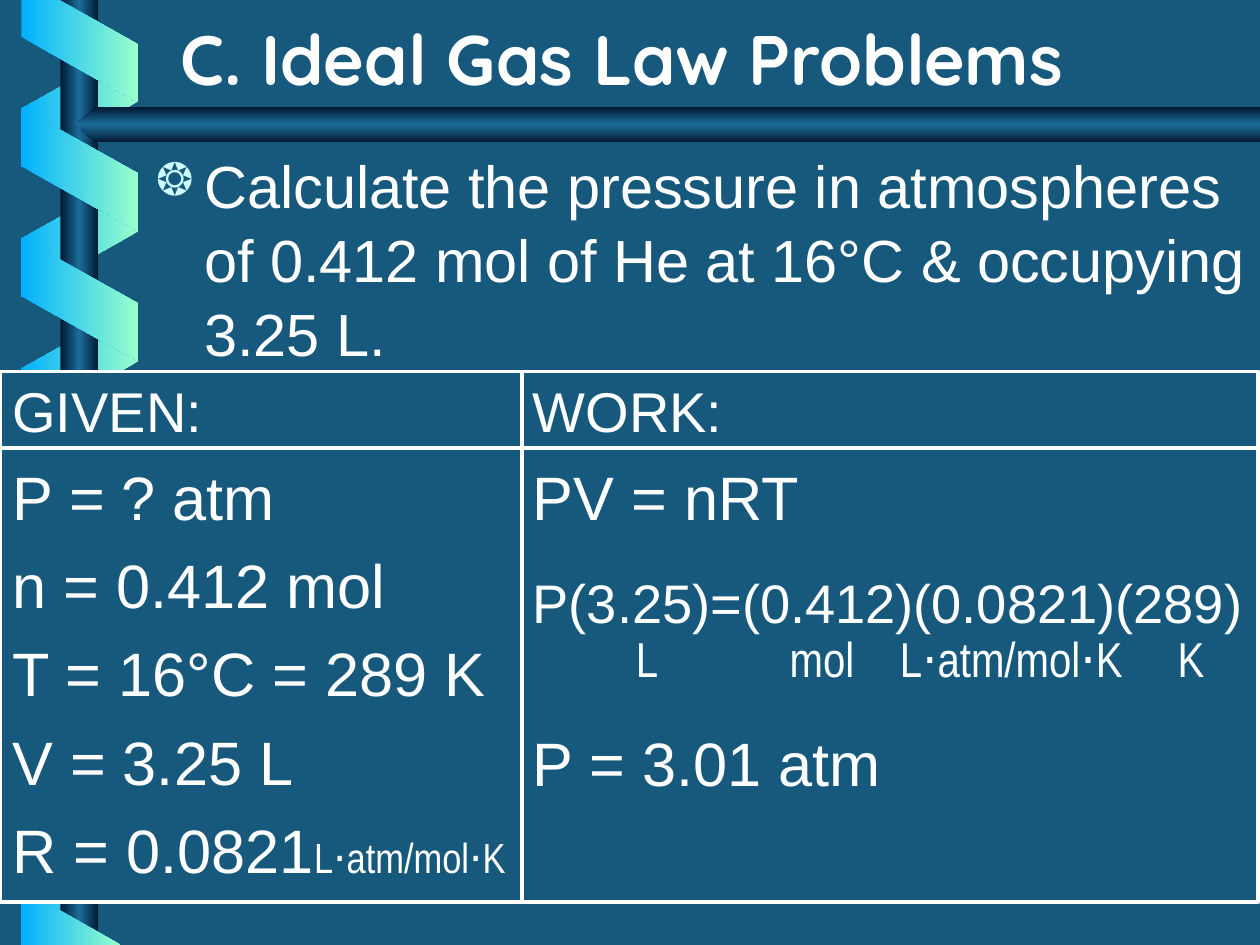
from pptx import Presentation
from pptx.dml.color import RGBColor
from pptx.enum.shapes import MSO_CONNECTOR as CONN, MSO_SHAPE as SHAPE
from pptx.enum.text import MSO_ANCHOR as ANCHOR, PP_ALIGN as ALIGN
from pptx.oxml import parse_xml
from pptx.oxml.ns import nsdecls
from pptx.util import Cm, Pt

COLORS = {
    "ground": "17597D",
    "text": "FFFFFF",
    "bullet": "CCFFFF",
    "sky": "01B0FF",
    "mint": "99FFCC",
    "navy": "001932",
    "steel": "1C6D9A",
}
RIBBON = ("sky", "mint")
RIBBON_BACK = RIBBON[::-1]
ROD = ("navy", "steel", "navy")
UNITS = "L⋅atm/mol⋅K"


def rgb(name):
    return RGBColor.from_string(COLORS[name])


def xml(body):
    """Parse a drawing element written with the a: prefix."""
    tag, rest = body[:-2].split(" ", 1) if body.endswith("/>") and body.count("<") == 1 else (None, None)
    if tag:
        return parse_xml(f"{tag} {nsdecls('a')} {rest}/>")
    head, tail = body.split(">", 1)
    return parse_xml(f"{head} {nsdecls('a')}>{tail}")


class SlideBuilder:
    font = "Arial"
    line_width = Pt(2.25)

    def __init__(self, slide):
        self.slide = slide
        self.shapes = slide.shapes
        fill = slide.background.fill
        fill.solid()
        fill.fore_color.rgb = rgb("ground")

    def gradient(self, sp, names, angle=0):
        """Fill with evenly spaced stops that keep their direction when the shape turns."""
        stops = "".join(
            f'<a:gs pos="{100000 * i // (len(names) - 1)}"><a:srgbClr val="{COLORS[n]}"/></a:gs>'
            for i, n in enumerate(names))
        sp._element.spPr.insert(2, xml(
            f'<a:gradFill rotWithShape="0"><a:gsLst>{stops}</a:gsLst>'
            f'<a:lin ang="{angle * 60000}" scaled="0"/></a:gradFill>'))
        sp.line.fill.background()
        sp.shadow.inherit = False

    def shape(self, kind, box, names, angle=0, rotation=0, flip=False, adj=None):
        sp = self.shapes.add_shape(kind, *map(Cm, box))
        if adj is not None:
            sp.adjustments[0] = adj
        sp.rotation = rotation
        if flip:
            sp._element.spPr.xfrm.set("flipH", "1")
        self.gradient(sp, names, angle)

    def outline(self, points, names):
        start, *rest = [(Cm(x), Cm(y)) for x, y in points]
        builder = self.shapes.build_freeform(*start)
        builder.add_line_segments(rest, close=True)
        self.gradient(builder.convert_to_shape(), names)

    def frame(self, box):
        sp = self.shapes.add_shape(SHAPE.RECTANGLE, *map(Cm, box))
        sp.fill.solid()
        sp.fill.fore_color.rgb = rgb("ground")
        sp.line.color.rgb = rgb("text")
        sp.line.width = self.line_width
        sp.shadow.inherit = False

    def rule(self, x1, y1, x2, y2):
        line = self.shapes.add_connector(CONN.STRAIGHT, Cm(x1), Cm(y1), Cm(x2), Cm(y2))
        line.line.color.rgb = rgb("text")
        line.line.width = self.line_width
        line._element.spPr.append(xml("<a:effectLst></a:effectLst>"))

    def run(self, p, text, size, font=None, bold=False):
        r = p.add_run()
        r.text = text
        r.font.size = Pt(size)
        r.font.name = font or self.font
        r.font.bold = bold
        r.font.color.rgb = rgb("text")
        return r

    def title(self, text, box):
        sp = self.shapes.title
        sp.left, sp.top, sp.width, sp.height = map(Cm, box)
        tf = sp.text_frame
        tf.vertical_anchor = ANCHOR.BOTTOM
        p = tf.paragraphs[0]
        p.alignment = ALIGN.LEFT
        r = self.run(p, text, 40, "Quicksand", bold=True)
        r.font.fill._xPr.find("{*}solidFill").addnext(xml(
            '<a:effectLst><a:outerShdw dist="35921" dir="2700000">'
            f'<a:srgbClr val="{COLORS["navy"]}"/></a:outerShdw></a:effectLst>'))

    def text(self, box, paragraphs):
        """Each paragraph is (space before, line spacing, runs), a run (text, size[, font])."""
        tf = self.shapes.add_textbox(*map(Cm, box)).text_frame
        tf.word_wrap = True
        for i, (before, spacing, runs) in enumerate(paragraphs):
            p = tf.add_paragraph() if i else tf.paragraphs[0]
            p.space_before = Pt(before)
            p.line_spacing = spacing
            for args in runs:
                self.run(p, *args)
        return tf

    def bullet(self, p, char, indent):
        pPr = p._p.get_or_add_pPr()
        pPr.set("marL", str(Cm(indent)))
        pPr.set("indent", str(-Cm(indent)))
        pPr.append(xml(f'<a:buClr><a:srgbClr val="{COLORS["bullet"]}"/></a:buClr>'))
        pPr.append(xml('<a:buSzPct val="75000"/>'))
        pPr.append(xml(f'<a:buChar char="{char}"/>'))

    def tabs(self, p, stops):
        items = "".join(f'<a:tab pos="{Cm(x)}" algn="l"/>' for x in stops)
        p._p.get_or_add_pPr().append(xml(f"<a:tabLst>{items}</a:tabLst>"))


def main():
    prs = Presentation()
    prs.slide_width, prs.slide_height = Cm(25.4), Cm(19.05)
    s = SlideBuilder(prs.slides.add_slide(prs.slide_layouts[5]))

    # Ribbon winding around the rod
    turns = [2.62 * i for i in range(3)]
    for y in [0.94 + t for t in turns] + [16.64]:
        s.shape(SHAPE.PARALLELOGRAM, (0.36, y, 2.49, 2.36), RIBBON_BACK,
                rotation=90, flip=True, adj=0.56)
    s.shape(SHAPE.RECTANGLE, (1.22, 0, 0.76, 19.05), ROD)
    for t in turns:
        s.shape(SHAPE.PARALLELOGRAM, (0.36, 2.24 + t, 2.49, 2.36), RIBBON,
                rotation=270, adj=0.56)
    s.outline([(0.43, 0), (0.43, 0.74), (2.77, 2.06), (2.77, 0.89), (1.19, 0)], RIBBON)
    s.outline([(2.43, 19.05), (0.43, 17.91), (0.43, 19.05)], RIBBON)
    s.shape(SHAPE.PENTAGON, (1.52, 2.16, 23.88, 0.71), ROD, angle=90, flip=True, adj=0.59)

    s.frame((0, 7.49, 25.37, 10.69))
    given = ["P = ? atm", "n = 0.412 mol", "T = 16°C = 289 K", "V = 3.25 L"]
    s.text((0, 7.47, 10.49, 9.8),
           [(6.4, 1, [("GIVEN:", 32)])]
           + [(8.5, 1, [(line, 35)]) for line in given]
           + [(8.5, 1, [("R = 0.0821", 35), (UNITS, 24, "Arial Narrow")])])
    work = s.text((10.49, 7.47, 14.91, 9.8), [
        (6.4, 1, [("WORK:", 32)]),
        (8.5, 1, [("PV = nRT", 35)]),
        (21, 1, [("P(3.25)=(0.412)(0.0821)(289)", 31)]),
        (0, 0.92, [(f"\tL\tmol\t{UNITS}\tK", 28, "Arial Narrow")]),
        (21, 1, [("P = 3.01 atm", 35)]),
    ])
    s.tabs(work.paragraphs[3], [2.08, 5.18, 7.4, 13])

    s.title("C. Ideal Gas Law Problems", (3.38, 0, 21.59, 2.13))
    problem = s.text((2.9, 2.82, 22.5, 3.68), [(0, 1.04, [(
        "Calculate the pressure in atmospheres of 0.412 mol of He at 16°C "
        "& occupying 3.25 L.", 34)])])
    s.bullet(problem.paragraphs[0], "❂", 0.97)
    s.rule(10.52, 7.49, 10.52, 18.14)
    s.rule(0, 9.04, 25.4, 9.04)
    prs.save("out.pptx")


if __name__ == "__main__":
    main()
